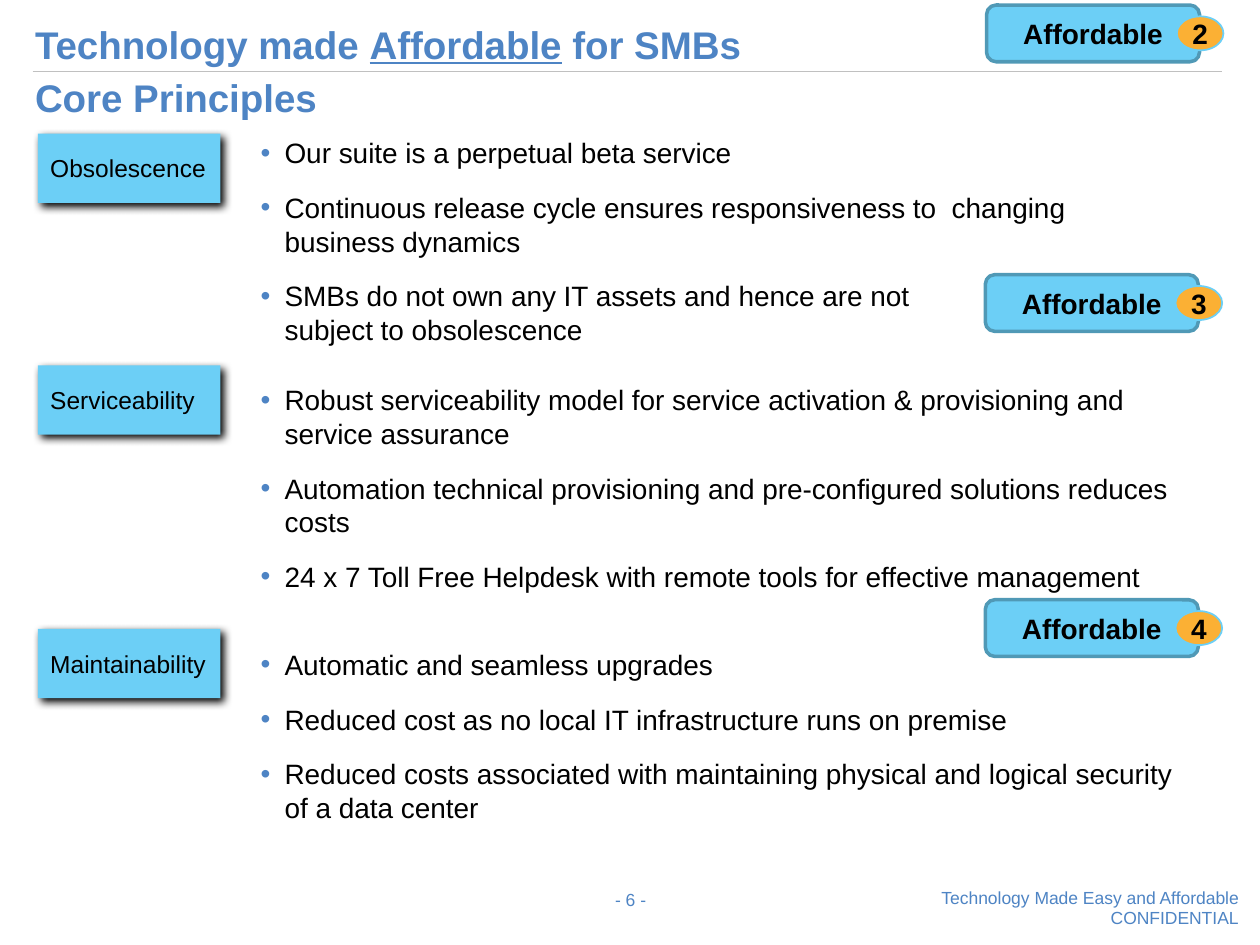
"""Build the slide on the core principles of affordable technology."""
from lxml import etree
from pptx import Presentation
from pptx.dml.color import RGBColor
from pptx.enum.shapes import MSO_CONNECTOR, MSO_SHAPE
from pptx.enum.text import MSO_ANCHOR, PP_ALIGN
from pptx.oxml.ns import qn
from pptx.util import Inches, Pt

RECT, ROUND, OVAL = MSO_SHAPE.RECTANGLE, MSO_SHAPE.ROUNDED_RECTANGLE, MSO_SHAPE.OVAL
LEFT, MID, RIGHT = PP_ALIGN.LEFT, PP_ALIGN.CENTER, PP_ALIGN.RIGHT
TOP, CENTER = MSO_ANCHOR.TOP, MSO_ANCHOR.MIDDLE
BLUE, SKY, TEAL, AMBER = "4E84C4", "6CCFF6", "5099B6", "FBB034"
BLACK, GRAY = "000000", "C0C0C0"

TITLE = [[("Technology made ", False), ("Affordable", True),
          (" for SMBs\vCore Principles", False)]]
GROUPS = [
    ("Obsolescence", 1.06, 1.03, 1.78, [
        "Our suite is a perpetual beta service",
        "Continuous release cycle ensures responsiveness to  changing business dynamics",
        "SMBs do not own any IT assets and hence are not\vsubject to obsolescence"]),
    ("Serviceability", 2.9, 2.99, 1.78, [
        "Robust serviceability model for service activation & provisioning"
        " and service assurance",
        "Automation technical provisioning and pre-configured solutions reduces costs",
        "24 x 7 Toll Free Helpdesk with remote tools for effective management"]),
    ("Maintainability", 4.99, 5.09, 1.51, [
        "Automatic and seamless upgrades",
        "Reduced cost as no local IT infrastructure runs on premise",
        "Reduced costs associated with maintaining physical and logical security"
        " of a data center"]),
]
BADGES = [("2", 7.83, 0.04), ("3", 7.82, 2.18), ("4", 7.82, 4.76)]
FOOTER = [("Technology Made Easy and Affordable", 7.04), ("CONFIDENTIAL", 7.2)]

SMALL = {"size": Pt(10), "name": "Arial"}
LABEL = {"size": Pt(14), "name": "Arial"}
BODY = {"size": Pt(16), "name": "Arial"}
STRONG = {**BODY, "bold": True}
HEAD = {"size": Pt(22), "name": "Arial", "bold": True}
SNUG = {f"margin_{side}": 0 for side in ("left", "top", "right", "bottom")}


def rgb(code):
    return RGBColor.from_string(code)


def assign(target, values):
    for name, value in values.items():
        setattr(target, name, value)


def node(parent, tag, **attrs):
    return etree.SubElement(parent, qn(tag), attrs)


def write(shape, paras, style, color, align=LEFT, anchor=CENTER, **frame):
    body = shape.text_frame
    assign(body, {"word_wrap": True, "vertical_anchor": anchor, **frame})
    for i, parts in enumerate(paras):
        para = body.paragraphs[0] if i == 0 else body.add_paragraph()
        para.alignment = align
        for words, under in parts:
            for j, line in enumerate(words.split("\v")):
                if j:
                    para.add_line_break()
                run = para.add_run()
                run.text = line
                assign(run.font, {**style, "underline": under})
                run.font.color.rgb = rgb(color)
    return body.paragraphs


def plain(*lines):
    return [[(line, False)] for line in lines]


def textbox(slide, *box):
    return slide.shapes.add_textbox(*map(Inches, box))


def block(slide, kind, box, fill, line=None, width=1):
    shape = slide.shapes.add_shape(kind, *map(Inches, box))
    shape.shadow.inherit = False
    shape.fill.solid()
    shape.fill.fore_color.rgb = rgb(fill)
    if line:
        shape.line.color.rgb = rgb(line)
        shape.line.width = Pt(width)
    else:
        shape.line.fill.background()
    return shape


def shade(shape):
    effects = shape.element.spPr.find(qn("a:effectLst"))
    outer = node(effects, "a:outerShdw", blurRad=str(Pt(5)), dist=str(Pt(2.9)),
                 dir="2700000", algn="tl", rotWithShape="0")
    node(outer, "a:srgbClr", val=BLACK)


def bullet(para, first):
    props = para._p.get_or_add_pPr()
    props.set("marL", str(Inches(0.19)))
    props.set("indent", str(Inches(-0.19)))
    node(node(props, "a:buClr"), "a:srgbClr", val=BLUE)
    node(props, "a:buFont", typeface="Arial")
    node(props, "a:buChar", char="•")
    para.space_before = Pt(0 if first else 12)


def rule(slide):
    line = slide.shapes.add_connector(
        MSO_CONNECTOR.STRAIGHT, *map(Inches, (0.26, 0.57, 9.7, 0.57)))
    line.line.color.rgb = rgb(GRAY)
    line.line.width = Pt(0.75)
    node(line.element.spPr, "a:effectLst")


def main():
    deck = Presentation()
    deck.slide_width, deck.slide_height = Inches(10), Inches(7.5)
    slide = deck.slides.add_slide(deck.slide_layouts[6])
    rule(slide)
    for words, top in FOOTER:
        write(textbox(slide, 5.57, top, 4.26, 0.17), plain(words), SMALL, BLUE,
              RIGHT, TOP, **SNUG)
    write(textbox(slide, 4.64, 6.94, 0.73, 0.39), plain("- 6 -"), SMALL, BLUE, MID)
    title = write(textbox(slide, 0.18, 0.06, 9.57, 0.94), TITLE, HEAD, BLUE)
    title[0].line_spacing = 1.15
    for name, top, start, high, points in GROUPS:
        label = block(slide, RECT, (0.3, top, 1.45, 0.55), SKY)
        shade(label)
        write(label, plain(name), LABEL, BLACK)
        paras = write(textbox(slide, 1.97, start, 7.51, high), plain(*points),
                      BODY, BLACK, anchor=TOP)
        for i, para in enumerate(paras):
            bullet(para, i == 0)
    for digit, left, top in BADGES:
        tag = block(slide, ROUND, (left, top, 1.69, 0.45), SKY, TEAL, 2)
        write(tag, plain("Affordable"), STRONG, BLACK, MID)
        dot = block(slide, OVAL, (left + 1.51, top + 0.09, 0.37, 0.27), AMBER, SKY)
        write(dot, plain(digit), STRONG, BLACK, MID, **SNUG)
    deck.save("out.pptx")


if __name__ == "__main__":
    main()
